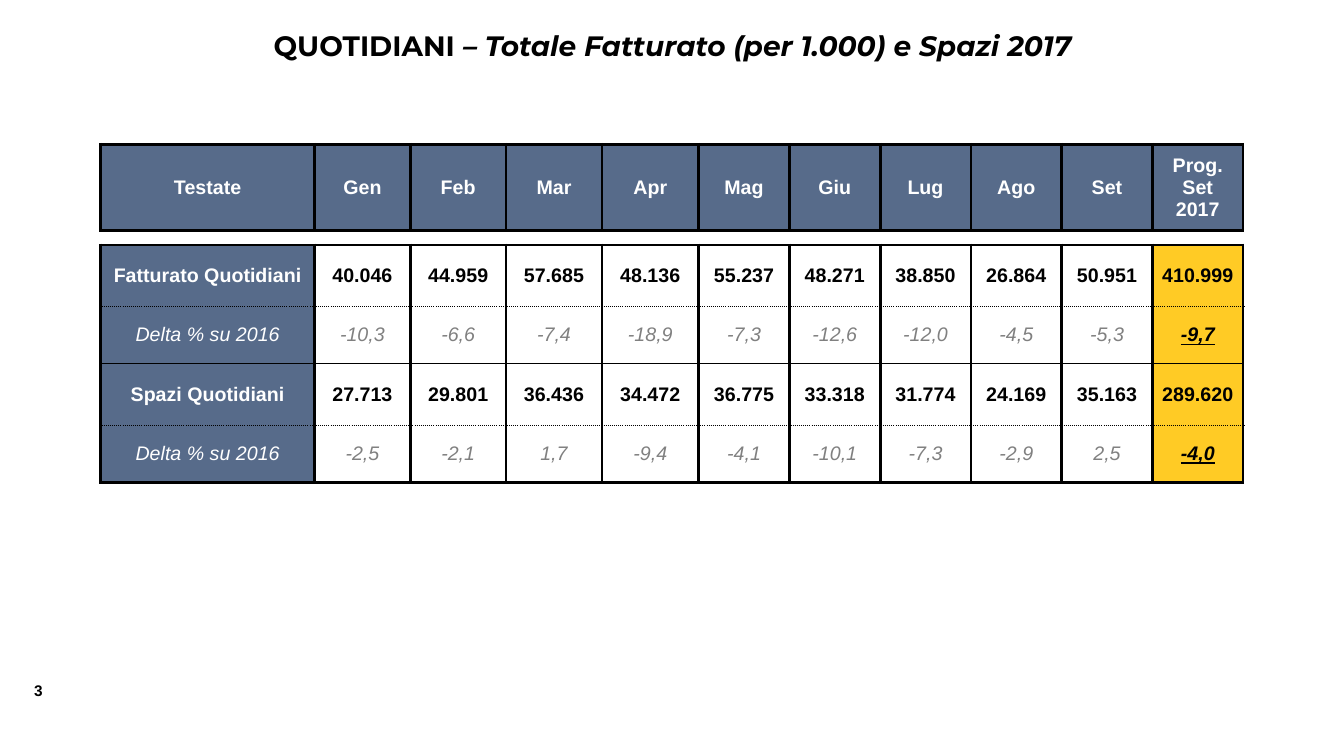
import pptx
import pptx.dml.color
import pptx.enum.text
import pptx.oxml
import pptx.oxml.ns
import pptx.util

Inches = pptx.util.Inches
Pt = pptx.util.Pt

BLACK, WHITE, GREY = "000000", "FFFFFF", "808080"
SLATE, YELLOW = "576B8A", "FFCB25"
THICK, THIN, DOTTED, NONE = (2.25, "solid"), (1, "solid"), (1, "sysDot"), None

COLUMN_WIDTHS = [2.12] + [0.95] * 3 + [0.96] + [0.9] * 6
ROW_HEIGHTS = [0.86, 0.14, 0.61, 0.57, 0.61, 0.57]
ROW_RULES = [THICK, THICK, THICK, DOTTED, THIN, DOTTED, THICK]
SPACER_ROW = 1
ROWS = [
    ["Testate", "Gen", "Feb", "Mar", "Apr", "Mag", "Giu", "Lug", "Ago", "Set",
     "Prog. Set 2017"],
    [""] * 11,
    ["Fatturato Quotidiani", "40.046", "44.959", "57.685", "48.136", "55.237",
     "48.271", "38.850", "26.864", "50.951", "410.999"],
    ["Delta % su 2016", "-10,3", "-6,6", "-7,4", "-18,9", "-7,3", "-12,6",
     "-12,0", "-4,5", "-5,3", "-9,7"],
    ["Spazi Quotidiani", "27.713", "29.801", "36.436", "34.472", "36.775",
     "33.318", "31.774", "24.169", "35.163", "289.620"],
    ["Delta % su 2016", "-2,5", "-2,1", "1,7", "-9,4", "-4,1", "-10,1",
     "-7,3", "-2,9", "2,5", "-4,0"],
]


def rgb(value):
    """Turn a hex string into a colour."""
    return pptx.dml.color.RGBColor.from_string(value)


def style_font(font, name, size, color, bold=True, italic=False):
    """Set the look of a font."""
    font.name, font.size = name, Pt(size)
    font.bold, font.italic = bold, italic
    font.color.rgb = rgb(color)


def set_borders(cell, left, right, top, bottom):
    """Draw the four borders of a table cell."""
    properties = cell._tc.get_or_add_tcPr()
    sides = zip(("lnL", "lnR", "lnT", "lnB"), (left, right, top, bottom))
    for position, (tag, rule) in enumerate(sides):
        width, dash = rule or (0, "solid")
        paint = (f'<a:solidFill><a:srgbClr val="{BLACK}"/></a:solidFill>'
                 f'<a:prstDash val="{dash}"/>' if rule else "<a:noFill/>")
        properties.insert(position, pptx.oxml.parse_xml(
            f'<a:{tag} {pptx.oxml.ns.nsdecls("a")} w="{Pt(width)}">{paint}</a:{tag}>'))


def fill_cell(cell, row, column, text):
    """Write and colour one cell according to its row and column."""
    spacer, header, label = row == SPACER_ROW, row == 0, column == 0
    total, delta = column == len(COLUMN_WIDTHS) - 1, row in (3, 5)
    on_slate = (header or label) and not spacer
    roomy = Inches(0.1) if on_slate else 0
    cell.margin_left = cell.margin_right = roomy
    cell.margin_top = cell.margin_bottom = roomy // 2
    cell.vertical_anchor = pptx.enum.text.MSO_ANCHOR.MIDDLE
    if spacer or not (on_slate or total):
        cell.fill.background()
    else:
        cell.fill.solid()
        cell.fill.fore_color.rgb = rgb(SLATE if on_slate else YELLOW)
    cell.text = text
    para = cell.text_frame.paragraphs[0]
    para.alignment = pptx.enum.text.PP_ALIGN.CENTER
    plain_delta = delta and not total
    color = WHITE if on_slate else GREY if plain_delta else BLACK
    style_font(para.font, "Arial", 1 if spacer else 14, color,
               bold=not plain_delta, italic=delta)
    if delta and total:
        para.font.underline = True
    side = NONE if spacer else THICK
    set_borders(cell, side, side, ROW_RULES[row], ROW_RULES[row + 1])


def add_revenue_table(page, left, top):
    """Add the monthly table of revenue and space."""
    frame = page.shapes.add_table(
        len(ROWS), len(COLUMN_WIDTHS), Inches(left), Inches(top),
        Inches(sum(COLUMN_WIDTHS)), Inches(sum(ROW_HEIGHTS)))
    table = frame.table
    table.horz_banding = False
    for column, width in zip(table.columns, COLUMN_WIDTHS):
        column.width = Inches(width)
    for row, height in zip(table.rows, ROW_HEIGHTS):
        row.height = Inches(height)
    for row, texts in enumerate(ROWS):
        for column, text in enumerate(texts):
            fill_cell(table.cell(row, column), row, column, text)


def add_title(page, left, top, width, height):
    """Place the title, with its second part in italics."""
    title = page.shapes.title
    title.left, title.top = Inches(left), Inches(top)
    title.width, title.height = Inches(width), Inches(height)
    para = title.text_frame.paragraphs[0]
    para.alignment = pptx.enum.text.PP_ALIGN.CENTER
    style_font(para.font, "Montserrat", 20, BLACK)
    para.add_run().text = "QUOTIDIANI "
    subject = para.add_run()
    subject.text = "– Totale Fatturato (per 1.000) e Spazi 2017"
    subject.font.italic = True


def add_page_number(page, left, top, width, height):
    """Add the page number."""
    box = page.shapes.add_textbox(
        Inches(left), Inches(top), Inches(width), Inches(height))
    para = box.text_frame.paragraphs[0]
    para.text = "3"
    style_font(para.font, "Arial", 11, BLACK)


def main():
    """Build the deck and save it."""
    deck = pptx.Presentation()
    deck.slide_width, deck.slide_height = Inches(13.33), Inches(7.5)
    page = deck.slides.add_slide(deck.slide_layouts[5])
    add_page_number(page, 0.24, 6.71, 0.42, 0.29)
    add_title(page, 1.67, 0.23, 10, 0.44)
    add_revenue_table(page, 1, 1.43)
    deck.save("out.pptx")


if __name__ == "__main__":
    main()
